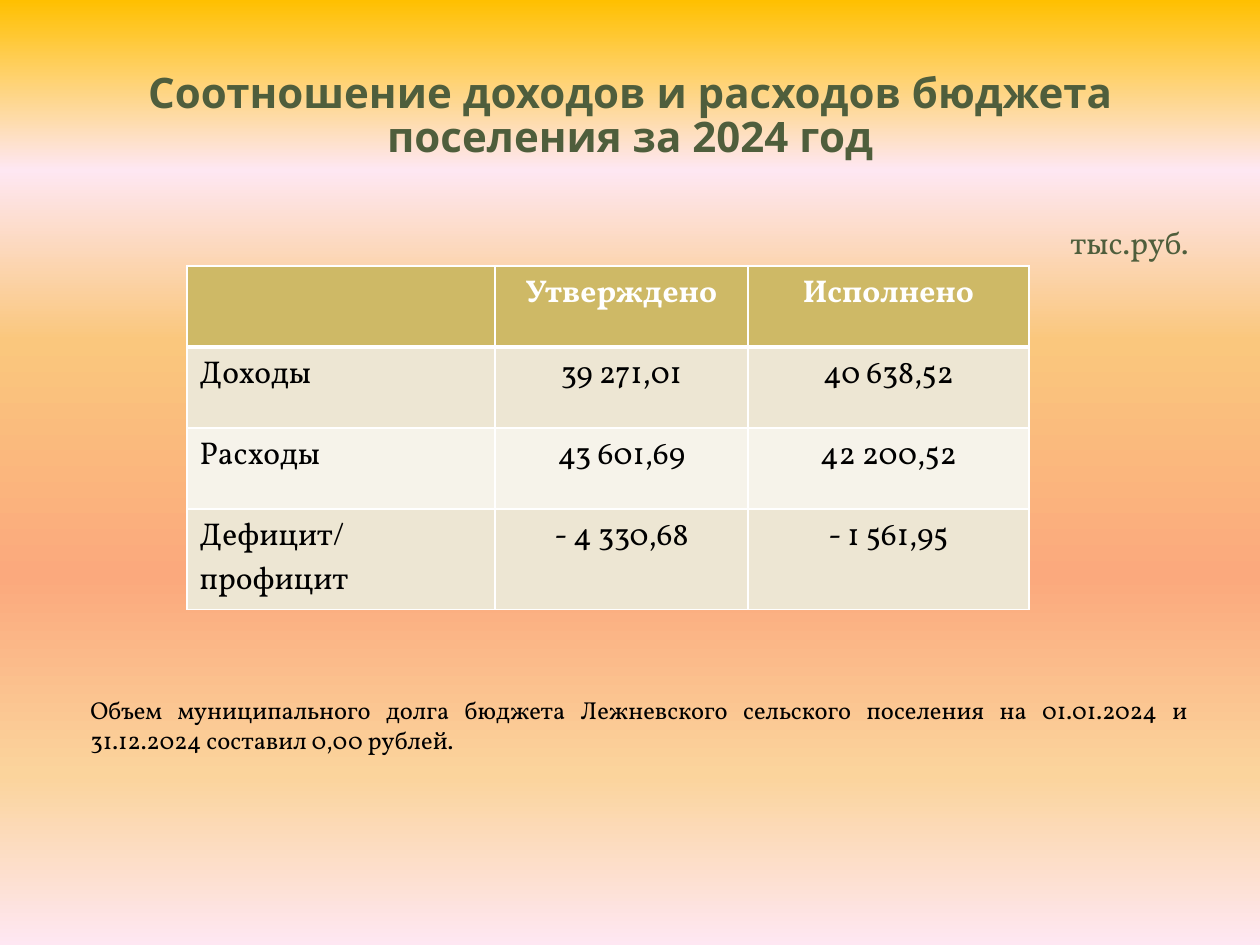
from dataclasses import dataclass

from lxml.etree import SubElement
from pptx import Presentation
from pptx.dml.color import RGBColor
from pptx.enum.text import MSO_ANCHOR, PP_ALIGN
from pptx.oxml.ns import qn
from pptx.util import Emu, Pt

EMU_PER_PX = 914400 / 126

WHITE = RGBColor(0xFF, 0xFF, 0xFF)
BLACK = RGBColor(0x00, 0x00, 0x00)
GREEN = RGBColor(0x4F, 0x5E, 0x3C)
GOLD = RGBColor(0xCE, 0xB9, 0x66)
SAND = RGBColor(0xED, 0xE6, 0xD3)
IVORY = RGBColor(0xF6, 0xF3, 0xEA)
AMBER = RGBColor(0xFF, 0xC0, 0x00)
PINK = RGBColor(0xFE, 0xE7, 0xF2)
APRICOT = RGBColor(0xFA, 0xC7, 0x7D)
SALMON = RGBColor(0xFB, 0xA9, 0x7D)
PEACH = RGBColor(0xFB, 0xD4, 0x9C)

SUNSET = ((0, AMBER), (18, PINK), (36, APRICOT), (61, SALMON), (82, PEACH), (100, PINK))


@dataclass
class Style:
    size: int
    color: RGBColor
    align: PP_ALIGN
    bold: bool = False
    font: str = "Vollkorn"


@dataclass
class Caption:
    text: str
    left: int
    top: int
    width: int
    height: int
    style: Style
    anchor: MSO_ANCHOR = MSO_ANCHOR.TOP
    line_spacing: float = 1.0


CAPTIONS = (
    Caption("Соотношение доходов и расходов бюджета поселения за 2024 год",
            63, 38, 1134, 158, Style(24, GREEN, PP_ALIGN.CENTER, True, "Noto Sans"),
            MSO_ANCHOR.MIDDLE, 0.88),
    Caption("тыс.руб.", 955, 217, 246, 50, Style(18, GREEN, PP_ALIGN.RIGHT)),
    Caption("Объем муниципального долга бюджета Лежневского сельского поселения "
            "на 01.01.2024 и 31.12.2024 составил 0,00 рублей.",
            78, 689, 1123, 72, Style(14, BLACK, PP_ALIGN.JUSTIFY)),
)

BUDGET = (
    ("", "Утверждено", "Исполнено"),
    ("Доходы", "39 271,01", "40 638,52"),
    ("Расходы", "43 601,69", "42 200,52"),
    ("Дефицит/ профицит", "- 4 330,68", "- 1 561,95"),
)
BUDGET_LEFT, BUDGET_TOP = 187, 266
COLUMN_WIDTHS = (308, 253, 281)
ROW_HEIGHT = 81


def px(length: int) -> Emu:
    return Emu(round(length * EMU_PER_PX))


def style_paragraph(paragraph, style: Style) -> None:
    paragraph.alignment = style.align
    for run in paragraph.runs:
        run.font.size = Pt(style.size)
        run.font.name = style.font
        run.font.bold = style.bold
        run.font.color.rgb = style.color


def paint_background(slide) -> None:
    fill = slide.background.fill
    fill.gradient()
    fill.gradient_angle = 270
    stops = next(slide.element.iter(qn("a:gsLst")))
    for stop in list(stops):
        stops.remove(stop)
    for percent, color in SUNSET:
        stop = SubElement(stops, qn("a:gs"), pos=str(percent * 1000))
        SubElement(stop, qn("a:srgbClr"), val=str(color))


def add_caption(slide, caption: Caption) -> None:
    box = slide.shapes.add_textbox(px(caption.left), px(caption.top),
                                   px(caption.width), px(caption.height))
    frame = box.text_frame
    frame.word_wrap = True
    frame.vertical_anchor = caption.anchor
    frame.text = caption.text
    paragraph = frame.paragraphs[0]
    paragraph.line_spacing = caption.line_spacing
    style_paragraph(paragraph, caption.style)


def add_border(cell, side: str, points: int) -> None:
    properties = cell._tc.get_or_add_tcPr()
    line = SubElement(properties, qn(f"a:ln{side}"), w=str(Pt(points)))
    fill = SubElement(line, qn("a:solidFill"))
    SubElement(fill, qn("a:srgbClr"), val=str(WHITE))


def style_cell(cell, row: int, column: int) -> None:
    header = row == 0
    for side in "LRTB":
        under_header = (row, side) in ((0, "B"), (1, "T"))
        add_border(cell, side, 3 if under_header else 1)
    cell.fill.solid()
    cell.fill.fore_color.rgb = GOLD if header else SAND if row % 2 else IVORY
    style_paragraph(cell.text_frame.paragraphs[0],
                    Style(18, WHITE if header else BLACK,
                          PP_ALIGN.CENTER if column else PP_ALIGN.LEFT, header))


def add_budget(slide) -> None:
    table = slide.shapes.add_table(
        len(BUDGET), len(COLUMN_WIDTHS), px(BUDGET_LEFT), px(BUDGET_TOP),
        px(sum(COLUMN_WIDTHS)), px(ROW_HEIGHT * len(BUDGET))).table
    for column, width in zip(table.columns, COLUMN_WIDTHS):
        column.width = px(width)
    for row, values in enumerate(BUDGET):
        table.rows[row].height = px(ROW_HEIGHT)
        for column, value in enumerate(values):
            cell = table.cell(row, column)
            cell.text_frame.text = value
            style_cell(cell, row, column)


def main() -> None:
    presentation = Presentation()
    presentation.slide_width = px(1260)
    presentation.slide_height = px(945)
    slide = presentation.slides.add_slide(presentation.slide_layouts[6])
    paint_background(slide)
    add_budget(slide)
    for caption in CAPTIONS:
        add_caption(slide, caption)
    presentation.save("out.pptx")


if __name__ == "__main__":
    main()
